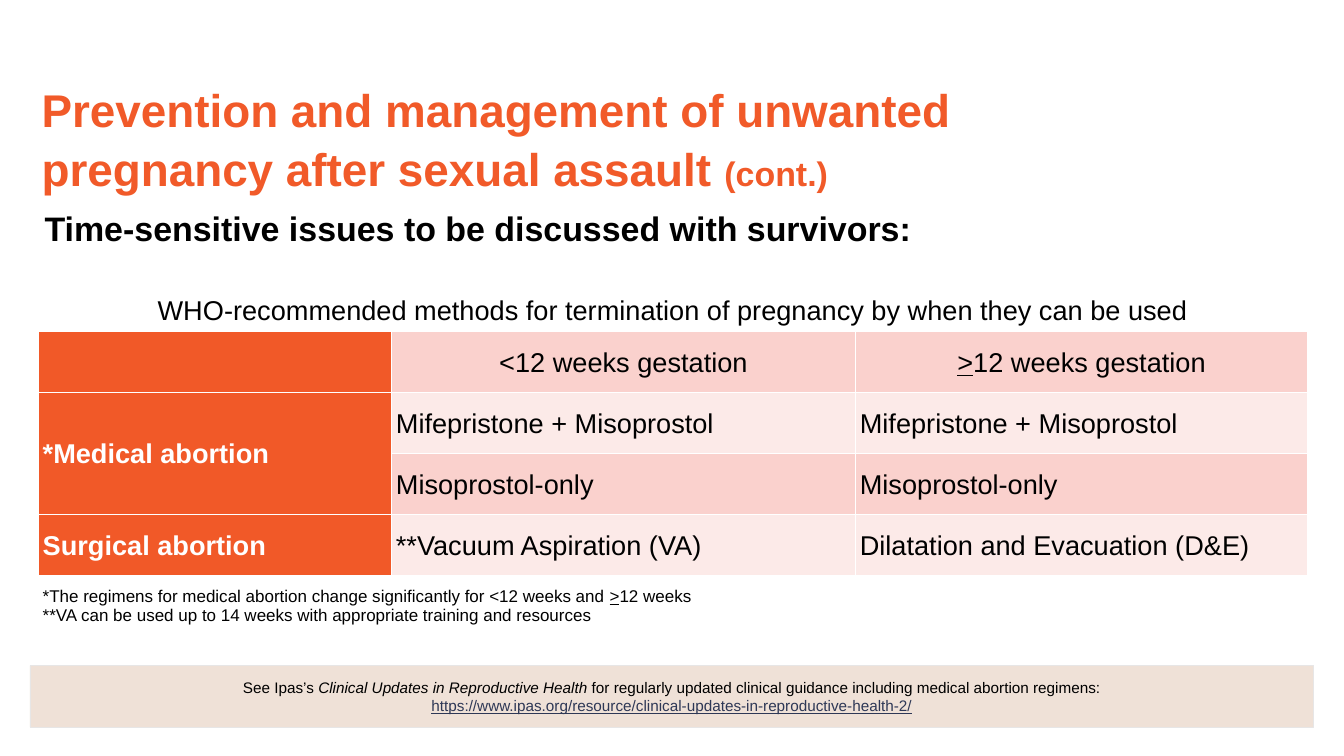
import pptx
import pptx.dml.color
import pptx.enum.shapes
import pptx.enum.text
import pptx.oxml
import pptx.oxml.ns
import pptx.util

ORANGE, CELL_ORANGE, PINK, PALE = "F15A29", "F15928", "FAD1CD", "FCEAE8"
BLACK, WHITE, SAND, GREY, NAVY = "000000", "FFFFFF", "EFE1D7", "E7E6E6", "2E3856"
LEFT, CENTER = pptx.enum.text.PP_ALIGN.LEFT, pptx.enum.text.PP_ALIGN.CENTER
TOP, MIDDLE = pptx.enum.text.MSO_ANCHOR.TOP, pptx.enum.text.MSO_ANCHOR.MIDDLE


def rgb(value):
    """Turn a hex string into a colour."""
    return pptx.dml.color.RGBColor.from_string(value)


class Deck:
    """Hold the style and the current slide; boxes are in percent of its size."""

    def __init__(self, width, height, font):
        """Start a presentation of the given size in inches."""
        self.prs = pptx.Presentation()
        self.prs.slide_width = pptx.util.Inches(width)
        self.prs.slide_height = pptx.util.Inches(height)
        self.font = font
        self.s = self.prs.slides.add_slide(self.prs.slide_layouts[1])

    def x(self, share):
        """Convert a share of the slide's width."""
        return round(self.prs.slide_width * share / 100)

    def y(self, share):
        """Convert a share of the slide's height."""
        return round(self.prs.slide_height * share / 100)

    def box(self, left, top, width, height):
        """Convert a box of shares to slide lengths."""
        return self.x(left), self.y(top), self.x(width), self.y(height)

    def text(self, tf, paras, para_format, **base):
        """Fill a text frame with paragraphs of (text, overrides) runs."""
        for i, runs in enumerate(paras):
            p = tf.add_paragraph() if i else tf.paragraphs[0]
            for name, value in para_format.items():
                setattr(p, name, value)
            for words, extra in runs:
                r = p.add_run()
                r.text = words
                look = {"name": self.font, "color": BLACK, "bold": False, **base, **extra}
                r.font.color.rgb = rgb(look.pop("color"))
                look["size"] = pptx.util.Pt(look["size"])
                for name, value in look.items():
                    setattr(r.font, name, value)

    def frame(self, tf, inset, anchor):
        """Set the inset, anchor and wrapping of a text frame."""
        look = {f"margin_{side}": pptx.util.Inches(inset)
                for side in ("left", "top", "right", "bottom")}
        look.update(vertical_anchor=anchor, word_wrap=True,
                    auto_size=pptx.enum.text.MSO_AUTO_SIZE.NONE)
        for name, value in look.items():
            setattr(tf, name, value)

    def placeholder(self, index, box, runs, para_format, **base):
        """Move a placeholder and set one plain paragraph in it."""
        sp = self.s.placeholders[index]
        sp.left, sp.top, sp.width, sp.height = self.box(*box)
        tf = sp.text_frame
        self.frame(tf, 0.1, TOP)
        pPr = tf.paragraphs[0]._p.get_or_add_pPr()
        pPr.set("marL", "0")
        pPr.set("indent", "0")
        pPr.append(pptx.oxml.parse_xml(f"<a:buNone {pptx.oxml.ns.nsdecls('a')}/>"))
        look = {"alignment": LEFT, "space_before": pptx.util.Pt(0), **para_format}
        self.text(tf, [runs], look, **base)

    def banner(self, box, paras, fill, line, **base):
        """Add a filled rectangle with centred text."""
        kind = pptx.enum.shapes.MSO_SHAPE.RECTANGLE
        sp = self.s.shapes.add_shape(kind, *self.box(*box))
        sp.shadow.inherit = False
        sp.fill.solid()
        sp.fill.fore_color.rgb = rgb(fill)
        sp.line.color.rgb = rgb(line)
        sp.line.width = pptx.util.Pt(0.75)
        self.frame(sp.text_frame, 0.2, MIDDLE)
        self.text(sp.text_frame, paras, {"alignment": CENTER}, **base)

    def table(self, left, top, cols, rows, spans):
        """Add an unstyled table with merged cells and return it."""
        box = self.box(left, top, sum(cols), sum(rows))
        tbl = self.s.shapes.add_table(len(rows), len(cols), *box).table
        tbl.first_row = tbl.horz_banding = False
        for col, share in zip(tbl.columns, cols):
            col.width = self.x(share)
        for row, share in zip(tbl.rows, rows):
            row.height = self.y(share)
        for first, last in spans:
            tbl.cell(*first).merge(tbl.cell(*last))
        return tbl

    def cell(self, cell, paras, fill, para_format, bottom=1, **base):
        """Border, fill and label one table cell."""
        cell.margin_left = cell.margin_right = pptx.util.Inches(0.07)
        cell.margin_top = cell.margin_bottom = 0
        cell.vertical_anchor = MIDDLE
        tcPr = cell._tc.get_or_add_tcPr()
        for side, width in (("L", 1), ("R", 1), ("T", 1), ("B", bottom)):
            tcPr.append(pptx.oxml.parse_xml(
                f'<a:ln{side} {pptx.oxml.ns.nsdecls("a")} w="{pptx.util.Pt(width)}">'
                f'<a:solidFill><a:srgbClr val="{WHITE}"/></a:solidFill></a:ln{side}>'))
        if fill:
            cell.fill.solid()
            cell.fill.fore_color.rgb = rgb(fill)
        else:
            cell.fill.background()
        self.text(cell.text_frame, paras, para_format, **base)


def main():
    """Build the slide and save it."""
    deck = Deck(21.99, 12.37, "Arial")
    deck.placeholder(
        0, (2.64, 9.54, 76.67, 24.41),
        [("Prevention and management of unwanted pregnancy after sexual assault ", {}),
         ("(cont.)", {"size": 40})],
        {"line_spacing": 1.07}, size=54, color=ORANGE, bold=True)
    deck.placeholder(
        1, (2.86, 25.87, 82.99, 8.41),
        [("Time-sensitive issues to be discussed with survivors:", {})],
        {"line_spacing": 1.15, "space_after": pptx.util.Pt(6)}, size=40, bold=True)

    under = (">", {"underline": True})
    both = ["Mifepristone + Misoprostol"] * 2
    caption = "WHO-recommended methods for termination of pregnancy by when they can be used"
    grid = [
        [caption, "", ""],
        ["", "<12 weeks gestation", [under, ("12 weeks gestation", {})]],
        ["*Medical abortion", *both],
        ["", "Misoprostol-only", "Misoprostol-only"],
        ["Surgical abortion", "**Vacuum Aspiration (VA)", "Dilatation and Evacuation (D&E)"],
    ]
    tbl = deck.table(2.86, 38.16, (26.28, 34.52, 33.65), [5.66] + [8.08] * 5,
                     [((0, 0), (0, 2)), ((2, 0), (3, 0)), ((5, 0), (5, 2))])
    for i, row in enumerate(grid):
        for j, value in enumerate(row):
            side = i > 0 and j == 0
            fill = WHITE if i == 0 else CELL_ORANGE if side else PINK if i % 2 else PALE
            runs = [(value, {})] if isinstance(value, str) else value
            deck.cell(tbl.cell(i, j), [runs] if value else [], fill,
                      {"alignment": CENTER if i < 2 else LEFT, "line_spacing": 1.07},
                      bottom=1 if i else 3, size=32, bold=side,
                      color=WHITE if side else BLACK)
    notes = [
        [("*The regimens for medical abortion change significantly for <12 weeks and ", {}),
         under, ("12 weeks", {})],
        [("**VA can be used up to 14 weeks with appropriate training and resources", {})],
    ]
    for j in range(3):
        deck.cell(tbl.cell(5, j), [] if j else notes, None, {"alignment": LEFT}, size=20)

    deck.banner(
        (2.23, 88.04, 95.5, 8.16),
        [[("See Ipas’s ", {}),
          ("Clinical Updates in Reproductive Health ", {"italic": True}),
          ("for regularly updated clinical guidance including medical abortion regimens:", {})],
         [("https://www.ipas.org/resource/clinical-updates-in-reproductive-health-2/",
           {"color": NAVY, "underline": True})]],
        SAND, GREY, size=18)
    deck.prs.save("out.pptx")


if __name__ == "__main__":
    main()
